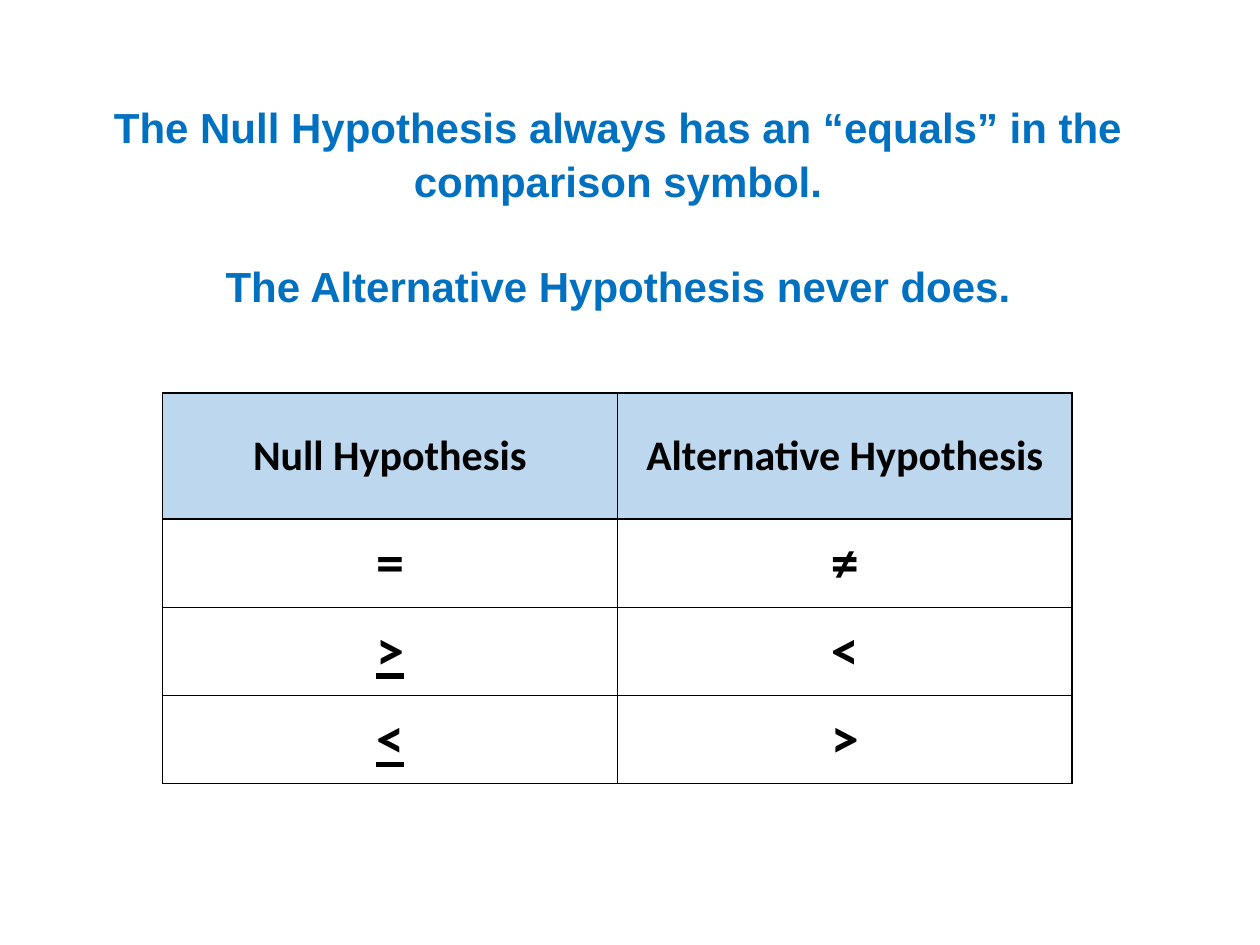
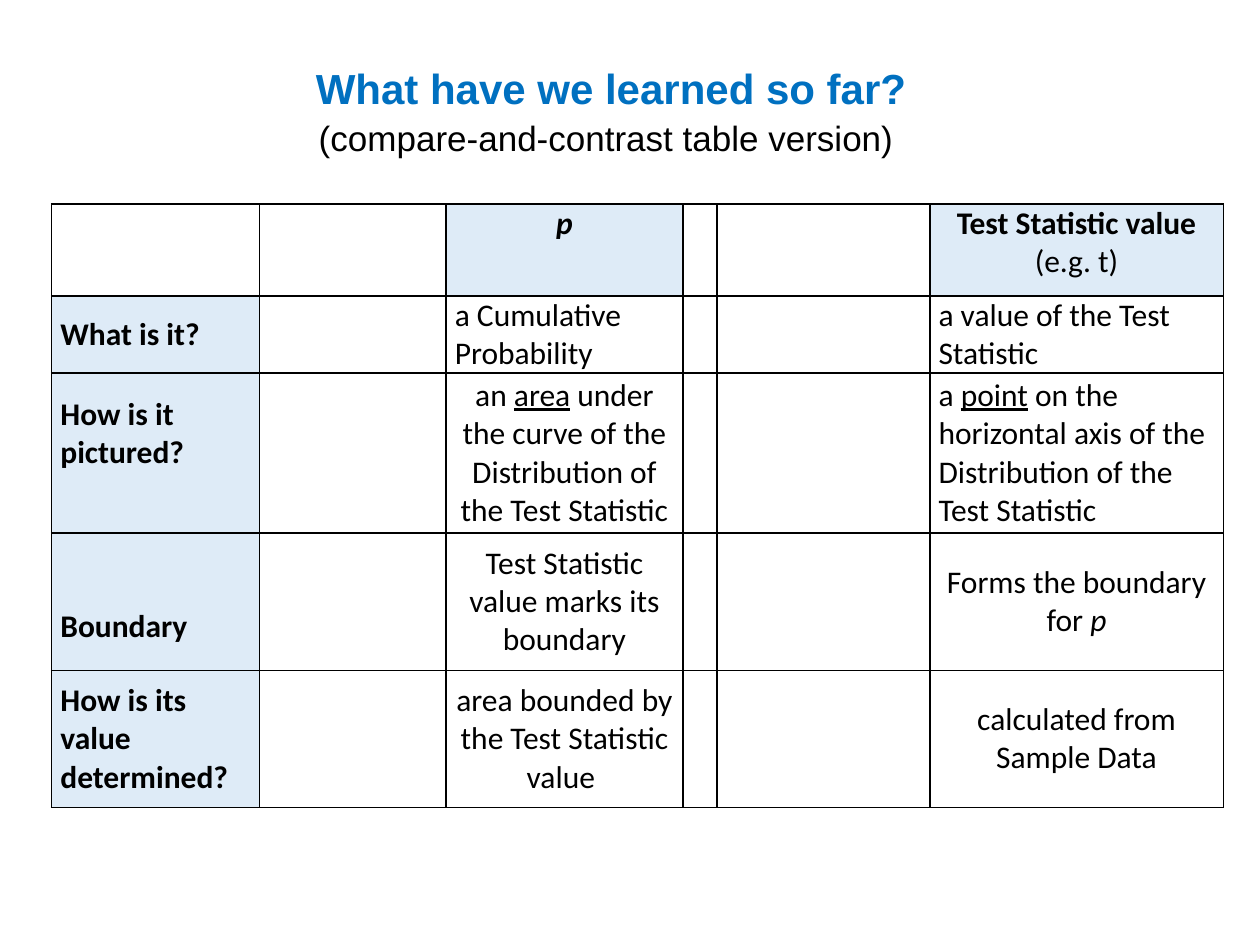
from lxml import etree
from pptx import Presentation
from pptx.dml.color import RGBColor
from pptx.enum.text import MSO_ANCHOR, MSO_AUTO_SIZE, PP_ALIGN
from pptx.oxml.ns import qn
from pptx.util import Inches, Pt

LEFT, CENTER = PP_ALIGN.LEFT, PP_ALIGN.CENTER
TOP, MIDDLE = MSO_ANCHOR.TOP, MSO_ANCHOR.MIDDLE
NO_AUTOFIT = MSO_AUTO_SIZE.NONE

TITLE_BLUE = RGBColor(0x00, 0x70, 0xC0)
BLACK = RGBColor(0x00, 0x00, 0x00)
HEADER_BLUE = RGBColor(0xBD, 0xD7, 0xEE)
PALE_BLUE = RGBColor(0xDE, 0xEB, 0xF7)
TITLE_FONT, TABLE_FONT = "Arial", "Calibri"
TITLE_LINE_SPACING = 1.07

# Title paragraphs: text, size, bold, colour, space before
RULE_TITLE = [
    ("The Null Hypothesis always has an “equals” in the comparison symbol.", 24, True, TITLE_BLUE, 0),
    ("The Alternative Hypothesis never does.", 24, True, TITLE_BLUE, 29),
]
SUMMARY_TITLE = [
    ("What have we learned so far?", 24, True, TITLE_BLUE, 0),
    ("(compare-and-contrast table version) ", 20, False, BLACK, 0),
]

# Cells are lists of (text, style letters): b bold, i italic, u underline
HYPOTHESES = [
    [[("Null Hypothesis", "b")], [("Alternative Hypothesis", "b")]],
    [[("=", "b")], [("≠", "b")]],
    [[(">", "bu")], [("<", "b")]],
    [[("<", "bu")], [(">", "b")]],
]

# Row label, p, test statistic value
COMPARISON = [
    ([], [("p", "bi")], [("Test Statistic value ", "b"), ("(e.g. t)", "")]),
    ([("What is it?", "b")],
     [("a Cumulative Probability", "")],
     [("a value of the Test Statistic", "")]),
    ([("How is it pictured?", "b")],
     [("an ", ""), ("area", "u"), (" under the curve of the Distribution of the Test Statistic", "")],
     [("a ", ""), ("point", "u"),
      (" on the horizontal axis of the Distribution of the Test Statistic", "")]),
    ([("Boundary", "b")],
     [("Test Statistic value marks its boundary", "")],
     [("Forms the boundary for ", ""), ("p", "i")]),
    ([("How is its value determined?", "b")],
     [("area bounded by the Test Statistic value ", "")],
     [("calculated from Sample Data", "")]),
]
LABEL_COLUMN, P_COLUMN, STATISTIC_COLUMN = 0, 2, 5
LEFT_ALIGNED = {(1, P_COLUMN), (1, STATISTIC_COLUMN), (2, STATISTIC_COLUMN)}
PICTURED_ROW, BOUNDARY_ROW = 2, 3


def add_titled_slide(presentation, paragraphs, left, top, width, height):
    slide = presentation.slides.add_slide(presentation.slide_layouts[5])
    title = slide.shapes.title
    title.left, title.top = Inches(left), Inches(top)
    title.width, title.height = Inches(width), Inches(height)
    text_frame = title.text_frame
    text_frame.auto_size = NO_AUTOFIT
    text_frame.word_wrap = True
    text_frame.vertical_anchor = TOP
    text_frame.text = "\n".join(entry[0] for entry in paragraphs)
    for paragraph, (_, size, bold, color, gap) in zip(text_frame.paragraphs, paragraphs):
        paragraph.alignment = CENTER
        paragraph.line_spacing = TITLE_LINE_SPACING
        paragraph.space_before = Pt(gap)
        font = paragraph.runs[0].font
        font.name, font.size, font.bold = TITLE_FONT, Pt(size), bold
        font.color.rgb = color
    return slide


def add_grid(slide, left, top, columns, rows):
    """Add a plain table with thin black borders and no fill."""
    frame = slide.shapes.add_table(len(rows), len(columns), Inches(left), Inches(top),
                                   Inches(sum(columns)), Inches(sum(rows)))
    table = frame.table
    table.first_row = table.horz_banding = False
    for column, width in zip(table.columns, columns):
        column.width = Inches(width)
    for row, height in zip(table.rows, rows):
        row.height = Inches(height)
    for cell in table.iter_cells():
        cell.fill.background()
        properties = cell._tc.get_or_add_tcPr()
        for position, side in enumerate(("a:lnL", "a:lnR", "a:lnT", "a:lnB")):
            line = etree.Element(qn(side), w=str(Pt(1)))
            fill = etree.SubElement(line, qn("a:solidFill"))
            etree.SubElement(fill, qn("a:srgbClr"), val=str(BLACK))
            properties.insert(position, line)
    return table


def fill_cell(cell, runs, size, alignment=CENTER, anchor=MIDDLE, color=None):
    cell.vertical_anchor = anchor
    if color is not None:
        cell.fill.solid()
        cell.fill.fore_color.rgb = color
    paragraph = cell.text_frame.paragraphs[0]
    paragraph.alignment = alignment
    for text, style in runs:
        run = paragraph.add_run()
        run.text = text
        font = run.font
        font.name, font.size = TABLE_FONT, Pt(size)
        font.bold, font.italic, font.underline = "b" in style, "i" in style, "u" in style
        font.color.rgb = BLACK


def build_hypotheses(presentation):
    slide = add_titled_slide(presentation, RULE_TITLE, 0.2, 0.73, 9.41, 1.72)
    table = add_grid(slide, 1.29, 3.12, [3.61] * 2, [1] + [0.7] * 3)
    for row, cells in enumerate(HYPOTHESES):
        for column, runs in enumerate(cells):
            is_header = row == 0
            fill_cell(table.cell(row, column), runs, 24 if is_header else 32,
                      color=HEADER_BLUE if is_header else None)


def build_comparison(presentation):
    slide = add_titled_slide(presentation, SUMMARY_TITLE, 1.11, 0.42, 7.48, 0.84)
    table = add_grid(slide, 0.41, 1.62, [1.65, 1.48, 1.88, 0.27, 1.69, 2.33],
                     [0.73, 0.6, 1.27, 1.09, 1.09])
    for row, cells in enumerate(COMPARISON):
        for column, runs in zip((LABEL_COLUMN, P_COLUMN, STATISTIC_COLUMN), cells):
            if not runs:
                continue
            cell = table.cell(row, column)
            is_label = column == LABEL_COLUMN
            cell.margin_left = cell.margin_right = Inches(0.07)
            cell.margin_top = cell.margin_bottom = 0
            fill_cell(cell, runs, 18,
                      alignment=LEFT if is_label or (row, column) in LEFT_ALIGNED else CENTER,
                      anchor=TOP if row == 0 else MIDDLE,
                      color=PALE_BLUE if is_label or row == 0 else None)
    # Two labels sit off the middle of their rows
    table.cell(PICTURED_ROW, LABEL_COLUMN).margin_bottom = Inches(0.31)
    table.cell(BOUNDARY_ROW, LABEL_COLUMN).margin_top = Inches(0.39)


def main():
    presentation = Presentation()
    presentation.slide_width, presentation.slide_height = Inches(10), Inches(7.5)
    build_hypotheses(presentation)
    build_comparison(presentation)
    presentation.save("out.pptx")


if __name__ == "__main__":
    main()
